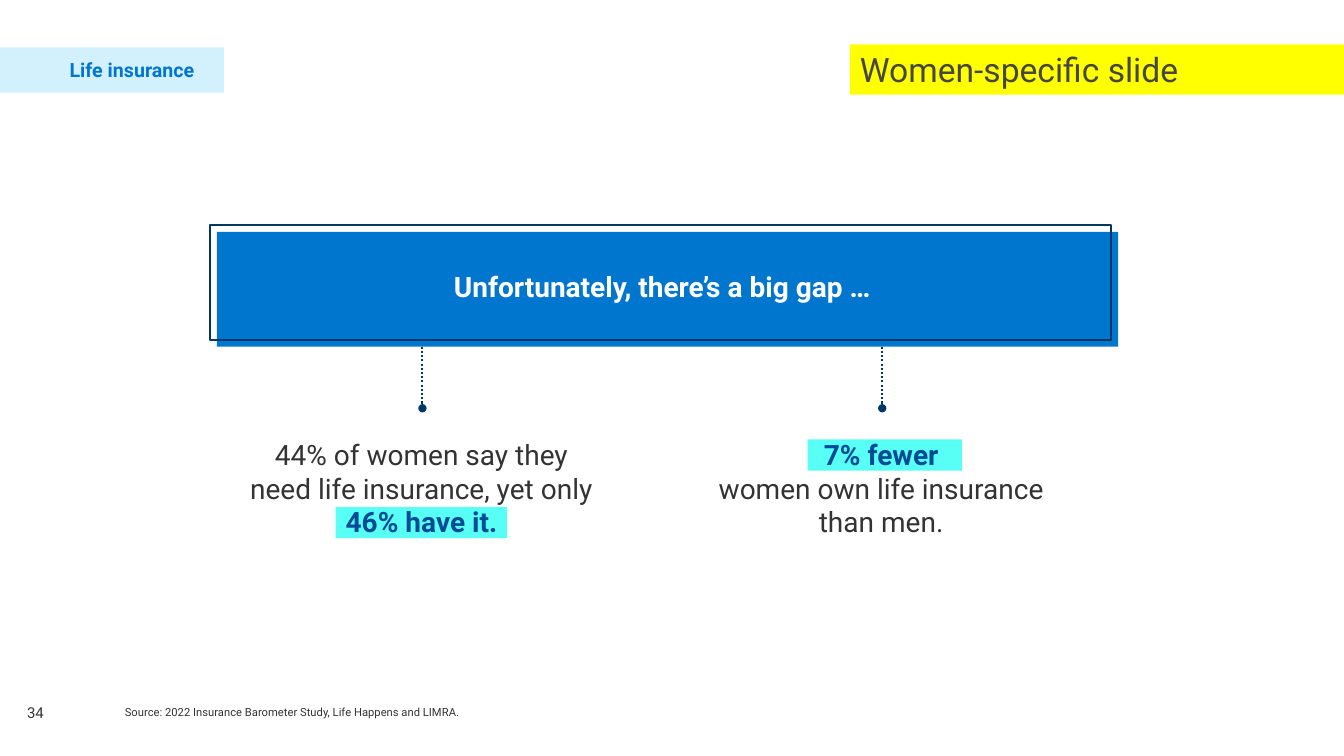
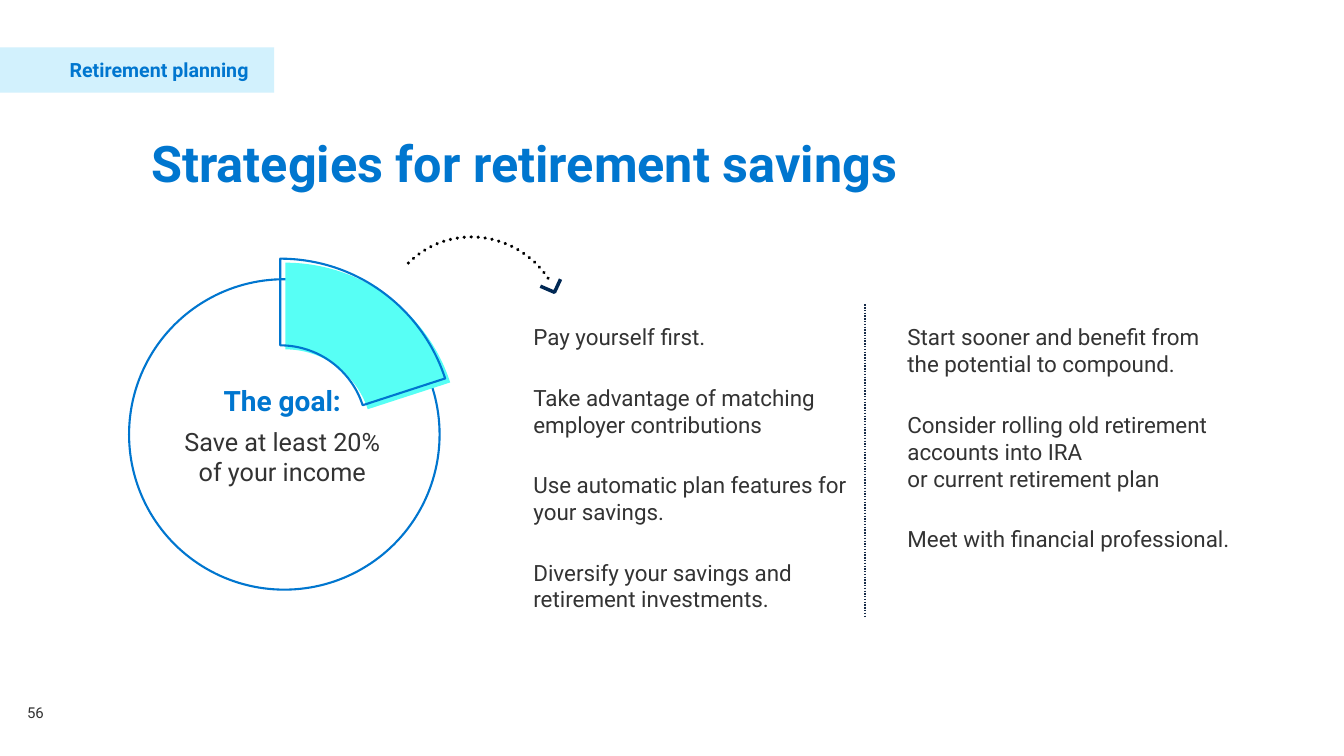
from dataclasses import dataclass

from lxml import etree
from pptx import Presentation
from pptx import util as u
from pptx.chart.data import CategoryChartData
from pptx.dml.color import RGBColor
from pptx.enum import chart as charts, dml, shapes, text
from pptx.oxml import ns

TITLE_ONLY = 5
ALIGN = text.PP_ALIGN
ANCHOR = text.MSO_ANCHOR
SHAPE = shapes.MSO_SHAPE


@dataclass(frozen=True)
class Theme:
    font: str = "Roboto"
    chart_font: str = "Calibri"
    blue: str = "0076CF"
    navy: str = "003865"
    deep_blue: str = "004B96"
    arrow: str = "002854"
    divider: str = "162B48"
    pale_blue: str = "D2F1FD"
    aqua: str = "57FFF5"
    yellow: str = "FFFF00"
    body: str = "333333"
    gray: str = "464647"
    chart_gray: str = "8C8D8E"
    white: str = "FFFFFF"
    black: str = "000000"
    title_size: float = 36
    flag_size: float = 24
    lead_size: float = 20
    goal_size: float = 18
    list_size: float = 16
    tag_size: float = 14
    number_size: float = 10.7
    chart_size: float = 10
    source_size: float = 8


THEME = Theme()


def inches(*lengths):
    return [u.Inches(length) for length in lengths]


def rgb(color):
    return RGBColor.from_string(color)


def set_all(target, values):
    for name, value in values.items():
        setattr(target, name, value)


def style_font(font, size, color, bold=False, name=THEME.font):
    set_all(font, {"name": name, "size": u.Pt(size), "bold": bold})
    font.color.rgb = rgb(color)


def style_fill(fill, color):
    if color:
        fill.solid()
        fill.fore_color.rgb = rgb(color)
    else:
        fill.background()


def style_line(line, color, width=1.5, dotted=False):
    style_fill(line.fill, color)
    if color:
        line.width = u.Pt(width)
    if dotted:
        line.dash_style = dml.MSO_LINE.ROUND_DOT


def write(shape, paragraphs, insets=(0.1, 0.05, 0.1, 0.05), anchor=ANCHOR.TOP,
          align=ALIGN.LEFT, after=0, spacing=1.0):
    """Fill a shape with paragraphs, each a list of (text, size, color, bold) runs."""
    frame = shape.text_frame
    left, top, right, bottom = inches(*insets)
    set_all(frame, {"word_wrap": True, "auto_size": text.MSO_AUTO_SIZE.NONE,
                    "vertical_anchor": anchor, "margin_left": left, "margin_top": top,
                    "margin_right": right, "margin_bottom": bottom})
    for index, runs in enumerate(paragraphs):
        paragraph = frame.add_paragraph() if index else frame.paragraphs[0]
        set_all(paragraph, {"alignment": align, "space_before": u.Pt(0),
                            "space_after": u.Pt(after), "line_spacing": spacing})
        for content, *style in runs:
            for number, line in enumerate(content.split("\n")):
                if number:
                    paragraph.add_line_break()
                if line:
                    run = paragraph.add_run()
                    run.text = line
                    style_font(run.font, *style)


def add_text(slide, box, paragraphs, **layout):
    write(slide.shapes.add_textbox(*inches(*box)), paragraphs, **layout)


def add_shape(slide, kind, box, fill=None, line=None, **line_style):
    shape = slide.shapes.add_shape(kind, *inches(*box))
    shape.shadow.inherit = False
    style_fill(shape.fill, fill)
    style_line(shape.line, line, **line_style)
    return shape


def add_vertical_line(slide, x, top, bottom, color, width, oval_end=False):
    line = slide.shapes.add_connector(
        shapes.MSO_CONNECTOR.STRAIGHT, *inches(x, top, x, bottom))
    style_line(line.line, color, width, dotted=True)
    if oval_end:
        etree.SubElement(line.line._get_or_add_ln(), ns.qn("a:tailEnd"), type="oval")
    etree.SubElement(line._element.spPr, ns.qn("a:effectLst"))


def place_title(slide, box, content, size, color, **layout):
    title = slide.shapes.title
    left, top, width, height = inches(*box)
    set_all(title, {"left": left, "top": top, "width": width, "height": height})
    write(title, [[(content, size, color, True)]], **layout)
    return title


def new_slide(presentation, topic, tag_width, number):
    """Add a slide with the topic tag and page number that all slides share."""
    slide = presentation.slides.add_slide(presentation.slide_layouts[TITLE_ONLY])
    tag = add_shape(slide, SHAPE.RECTANGLE, (0, 0.47, tag_width, 0.45), THEME.pale_blue)
    write(tag, [[(topic, THEME.tag_size, THEME.blue, True)]],
          insets=(0.69, 0, 0, 0), anchor=ANCHOR.MIDDLE)
    add_text(slide, (0.17, 6.93, 0.71, 0.4),
             [[(number, THEME.number_size, THEME.body)]])
    return slide


def add_banner(slide, box, content):
    left, top, width, height = box
    banner = place_title(slide, box, content, THEME.lead_size, THEME.white,
                         insets=(0.1, 0, 0.2, 0.06), anchor=ANCHOR.MIDDLE,
                         align=ALIGN.CENTER)
    style_fill(banner.fill, THEME.blue)
    add_shape(slide, SHAPE.RECTANGLE, (left - 0.07, top - 0.07, width, height),
              line=THEME.navy)


def add_fact(slide, box, stem_x, stem_top, highlight, runs):
    """Draw a dotted stem above a fact; highlight is relative to the fact's box."""
    left, top, _, _ = box
    add_vertical_line(slide, stem_x, stem_top, stem_top + 0.61, THEME.navy, 1.5,
                      oval_end=True)
    x, y, mark_width = highlight
    add_shape(slide, SHAPE.RECTANGLE, (left + x, top + y, mark_width, 0.31), THEME.aqua)
    add_text(slide, box, [runs], insets=(0.13, 0.07, 0.13, 0.07), align=ALIGN.CENTER)


def build_gap_slide(presentation):
    slide = new_slide(presentation, "Life insurance", 2.22, "34")
    flag = add_shape(slide, SHAPE.RECTANGLE, (8.43, 0.44, 4.9, 0.5), THEME.yellow)
    write(flag, [[("Women-specific slide", THEME.flag_size, THEME.gray)]],
          anchor=ANCHOR.MIDDLE)
    add_banner(slide, (2.15, 2.3, 8.94, 1.14), "Unfortunately, there’s a big gap …")
    plain = (THEME.lead_size, THEME.body)
    strong = (THEME.lead_size, THEME.deep_blue, True)
    facts = [
        (2.07, 4.19, (1.26, 0.76, 1.7),
         [("44% of women say they\nneed life insurance, yet only\n", *plain),
          ("46% have it.", *strong)]),
        (6.63, 8.75, (1.38, 0.09, 1.53),
         [("7% fewer\n", *strong), ("women own life insurance\nthan men.", *plain)]),
    ]
    for left, stem_x, highlight, runs in facts:
        add_fact(slide, (left, 4.27, 4.22, 1.77), stem_x, 3.44, highlight, runs)
    add_text(slide, (1.14, 6.76, 9.87, 0.42),
             [[("Source: 2022 Insurance Barometer Study, Life Happens and LIMRA.",
                THEME.source_size, THEME.body)]], anchor=ANCHOR.BOTTOM)


def clear_background(chart):
    """Make the chart and plot areas transparent and fix the plot's position."""
    chart_part = chart.element.find(ns.qn("c:chart"))
    plot_area = chart_part.find(ns.qn("c:plotArea"))
    for place in (chart_part.addnext, plot_area.append):
        properties = etree.Element(ns.qn("c:spPr"))
        etree.SubElement(properties, ns.qn("a:noFill"))
        etree.SubElement(etree.SubElement(properties, ns.qn("a:ln")), ns.qn("a:noFill"))
        place(properties)
    layout = plot_area.find(ns.qn("c:layout"))
    if layout is None:
        layout = etree.Element(ns.qn("c:layout"))
        plot_area.insert(0, layout)
    manual = etree.SubElement(layout, ns.qn("c:manualLayout"))
    values = {"layoutTarget": "inner", "xMode": "edge", "yMode": "edge",
              "x": "0", "y": "0.04", "w": "0.94", "h": "0.94"}
    for name, value in values.items():
        etree.SubElement(manual, ns.qn(f"c:{name}"), val=value)


def add_savings_ring(slide, box, fill=None, line=None):
    """Add a doughnut in which only the 20% share shows."""
    data = CategoryChartData()
    data.categories = ["1", "2", "3", "4"]
    data.add_series("Series 1", (20, 80, None, None))
    chart = slide.shapes.add_chart(
        charts.XL_CHART_TYPE.DOUGHNUT, *inches(*box), data).chart
    set_all(chart, {"has_legend": False, "has_title": False})
    style_font(chart.font, THEME.chart_size, THEME.chart_gray, name=THEME.chart_font)
    plot = chart.plots[0]
    set_all(plot, {"vary_by_categories": True, "has_data_labels": False})
    chart.element.find(f".//{ns.qn('c:holeSize')}").set("val", "79")
    for index, (color, outline) in enumerate([(fill, line), (None, None)]):
        point = plot.series[0].points[index].format
        style_fill(point.fill, color)
        style_line(point.line, outline)
    clear_background(chart)


def add_goal(slide, box):
    left, top, size, _ = box
    add_text(slide, (left + 0.05, top + 0.99, 2.94, 1.01),
             [[("The goal:", THEME.lead_size, THEME.blue, True)],
              [("Save at least 20%\nof your income", THEME.goal_size, THEME.body)]],
             align=ALIGN.CENTER, after=6)
    add_shape(slide, SHAPE.OVAL, box, line=THEME.blue)
    ring = size + 0.58
    add_savings_ring(slide, (left - 0.17, top - 0.31, ring, ring), fill=THEME.aqua)
    add_savings_ring(slide, (left - 0.22, top - 0.35, ring, ring), line=THEME.blue)


def add_curved_arrow(slide, box):
    """Draw a dotted arc with an open chevron at its right end."""
    left, top, _, _ = box
    arc = add_shape(slide, SHAPE.ARC, box, line=THEME.black, width=2.5, dotted=True)
    arc.line._get_or_add_ln().set("cap", "rnd")
    arc.rotation = 314.6
    arc.adjustments[0], arc.adjustments[1] = 161.99, 9.66
    start, tip, end = [inches(left + x, top + y)
                       for x, y in [(1.55, 0.5), (1.69, 0.56), (1.75, 0.43)]]
    builder = slide.shapes.build_freeform(*start)
    builder.add_line_segments([tip, end], close=False)
    head = builder.convert_to_shape()
    head.shadow.inherit = False
    style_fill(head.fill, None)
    style_line(head.line, THEME.arrow, 2.5)


def build_strategies_slide(presentation):
    slide = new_slide(presentation, "Retirement planning", 2.72, "56")
    place_title(slide, (1.5, 1.41, 11.59, 0.5), "Strategies for retirement savings",
                THEME.title_size, THEME.blue, insets=(0, 0, 0, 0),
                anchor=ANCHOR.BOTTOM, spacing=0.8)
    columns = {
        5.29: ["Pay yourself first.",
               "Take advantage of matching employer contributions",
               "Use automatic plan features for your savings.",
               "Diversify your savings and retirement investments."],
        9: ["Start sooner and benefit from the potential to compound.",
            "Consider rolling old retirement accounts into IRA\n"
            "or current retirement plan",
            "Meet with financial professional."],
    }
    for left, strategies in columns.items():
        add_text(slide, (left, 3.21, 3.21, 2.89),
                 [[(strategy, THEME.list_size, THEME.body)] for strategy in strategies],
                 insets=(0, 0, 0, 0), after=24)
    add_vertical_line(slide, 8.58, 3.02, 6.13, THEME.divider, 1)
    add_curved_arrow(slide, (3.81, 2.34, 1.77, 1.81))
    add_goal(slide, (1.28, 2.77, 3.08, 3.08))


def main():
    presentation = Presentation()
    set_all(presentation, {"slide_width": u.Inches(13.33), "slide_height": u.Inches(7.5)})
    build_gap_slide(presentation)
    build_strategies_slide(presentation)
    presentation.save("out.pptx")


if __name__ == "__main__":
    main()
